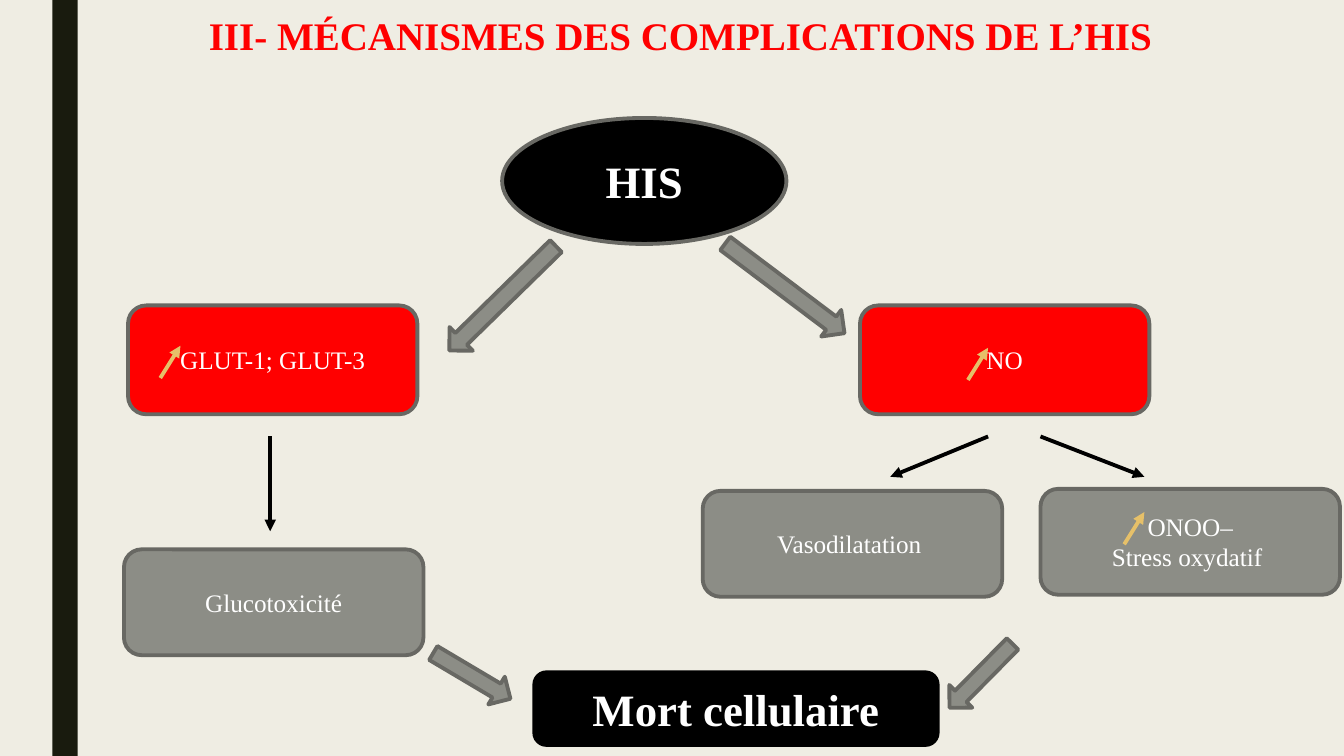
"""Build the slide on the mechanisms of HIS complications."""
from lxml import etree
from pptx import Presentation
from pptx.dml.color import RGBColor
from pptx.enum.shapes import MSO_CONNECTOR, MSO_SHAPE
from pptx.enum.text import MSO_ANCHOR, PP_ALIGN
from pptx.oxml.ns import qn
from pptx.util import Inches, Pt

OVAL, ROUND = MSO_SHAPE.OVAL, MSO_SHAPE.ROUNDED_RECTANGLE
RECT, DOWN = MSO_SHAPE.RECTANGLE, MSO_SHAPE.DOWN_ARROW
STRAIGHT = MSO_CONNECTOR.STRAIGHT
CENTER, TOP, MIDDLE = PP_ALIGN.CENTER, MSO_ANCHOR.TOP, MSO_ANCHOR.MIDDLE

CREAM = RGBColor(0xEF, 0xED, 0xE3)
OLIVE = RGBColor(0x19, 0x1B, 0x0E)
RED = RGBColor(0xFF, 0, 0)
BLACK = RGBColor(0, 0, 0)
WHITE = RGBColor(0xFF, 0xFF, 0xFF)
GREY = RGBColor(0x8C, 0x8D, 0x86)
EDGE = RGBColor(0x68, 0x68, 0x63)
GOLD = RGBColor(0xE6, 0xC0, 0x69)
FONT = "Times New Roman"
WIDTH = Pt(2.75)

TITLE = "III- MÉCANISMES DES COMPLICATIONS DE L’HIS"
CAUSE, EFFECT = (2.87, 1.08), (2.97, 1.05)
NODES = [
    ("HIS", OVAL, (4.98, 1.17), (2.82, 1.25), BLACK, EDGE, 32),
    ("GLUT-1; GLUT-3", ROUND, (1.27, 3.03), CAUSE, RED, EDGE, 18),
    ("NO", ROUND, (8.53, 3.03), CAUSE, RED, EDGE, 18),
    ("Glucotoxicité", ROUND, (1.23, 5.45), EFFECT, GREY, EDGE, 18),
    ("ONOO–\nStress oxydatif ", ROUND, (10.32, 4.85), EFFECT, GREY, EDGE, 18),
    ("Vasodilatation ", ROUND, (6.97, 4.87), EFFECT, GREY, EDGE, 18),
    ("Mort cellulaire", ROUND, (5.3, 6.67), (4, 0.72), BLACK, BLACK, 32),
]
LONG, SHORT = (0.33, 1.48), (0.32, 0.89)
BLOCKS = [
    ((7.62, 2.12), LONG, 307),
    ((4.82, 2.22), LONG, 45.6),
    ((9.57, 6.26), SHORT, 44.6),
    ((4.52, 6.26), SHORT, 300.7),
]
RISES = [(1.59, 3.75), (9.6, 3.77), (11.15, 5.4)]
RISE = (0.2, -0.32)
LINKS = [
    ((2.68, 4.33), (2.68, 5.27)),
    ((10.32, 4.33), (11.35, 4.73)),
    ((9.8, 4.33), (8.83, 4.73)),
]


def style(frame, size, color, bold, anchor):
    """Centre the text and set its font."""
    frame.word_wrap = True
    frame.vertical_anchor = anchor
    for para in frame.paragraphs:
        para.alignment = CENTER
        for run in para.runs:
            font = run.font
            font.name, font.size, font.bold = FONT, Pt(size), bold
            font.color.rgb = color


def add_box(slide, kind, at, size, fill, edge=None):
    """Add a flat filled shape."""
    box = slide.shapes.add_shape(kind, *map(Inches, at + size))
    box.shadow.inherit = False
    box.fill.solid()
    box.fill.fore_color.rgb = fill
    if edge is None:
        box.line.fill.background()
    else:
        box.line.color.rgb = edge
        box.line.width = WIDTH
    return box


def add_arrow(slide, start, end, color):
    """Add a line with a head at its end."""
    arrow = slide.shapes.add_connector(STRAIGHT, *map(Inches, start + end))
    arrow.line.color.rgb = color
    arrow.line.width = WIDTH
    props = arrow._element.spPr
    etree.SubElement(props.find(qn("a:ln")), qn("a:tailEnd"), type="triangle")
    etree.SubElement(props, qn("a:effectLst"))


def main():
    """Lay out the slide and save it."""
    deck = Presentation()
    deck.slide_width, deck.slide_height = Inches(13.33), Inches(7.5)
    slide = deck.slides.add_slide(deck.slide_layouts[5])
    back = slide.background.fill
    back.solid()
    back.fore_color.rgb = CREAM
    add_box(slide, RECT, (0.52, 0), (0.25, 7.5), OLIVE)

    title = slide.shapes.title
    title.left, title.top = Inches(1.5), Inches(0.12)
    title.width, title.height = Inches(10.5), Inches(0.83)
    title.text_frame.text = TITLE
    title.text_frame.paragraphs[0].line_spacing = 0.89
    style(title.text_frame, 27.9, RED, True, TOP)

    for text, kind, at, size, fill, edge, points in NODES:
        node = add_box(slide, kind, at, size, fill, edge)
        node.text_frame.text = text
        style(node.text_frame, points, WHITE, points > 18, MIDDLE)
    for at, size, angle in BLOCKS:
        add_box(slide, DOWN, at, size, GREY, EDGE).rotation = angle
    for x, y in RISES:
        add_arrow(slide, (x, y), (x + RISE[0], y + RISE[1]), GOLD)
    for start, end in LINKS:
        add_arrow(slide, start, end, BLACK)
    deck.save("out.pptx")


if __name__ == "__main__":
    main()
